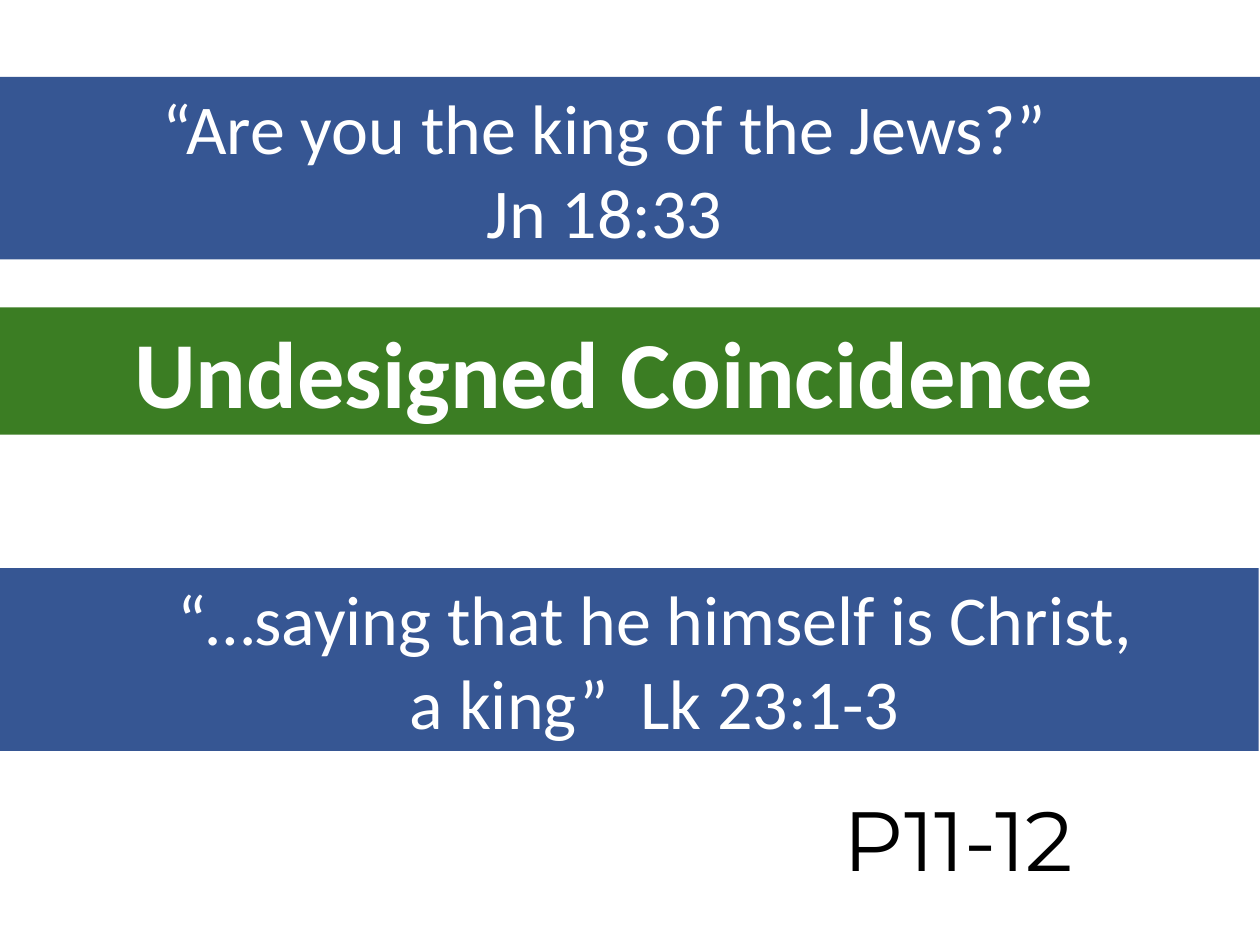
from pptx import Presentation
from pptx.dml.color import RGBColor
from pptx.enum.shapes import MSO_SHAPE
from pptx.enum.text import MSO_ANCHOR, PP_ALIGN
from pptx.util import Inches, Pt

COLORS = {"verse": "365693", "heading": "3B7D23", "light": "FFFFFF", "dark": "000000"}

deck = Presentation()
deck.slide_width, deck.slide_height = Inches(10), Inches(7.5)
COLUMN = deck.slide_width / 100
ROW = deck.slide_height / 75
slide = deck.slides.add_slide(deck.slide_layouts[6])


def grid(left, top, width, height):
    return [round(n) for n in (left * COLUMN, top * ROW, width * COLUMN, height * ROW)]


def write(holder, lines, size, color="light", font="Calibri", bold=False,
          align=PP_ALIGN.CENTER, anchor=MSO_ANCHOR.TOP, left=1, right=1):
    frame = holder.text_frame
    frame.word_wrap = True
    frame.vertical_anchor = anchor
    frame.margin_left, frame.margin_right = round(left * COLUMN), round(right * COLUMN)
    frame.margin_top = frame.margin_bottom = round(0.5 * ROW)
    for number, line in enumerate(lines):
        paragraph = frame.add_paragraph() if number else frame.paragraphs[0]
        paragraph.alignment = align
        run = paragraph.add_run()
        run.text = line
        run.font.name, run.font.size, run.font.bold = font, Pt(size), bold
        run.font.color.rgb = RGBColor.from_string(COLORS[color])


# Bands: place on the grid, fill, lines, text format
bands = [
    ((0, 6.1, 100, 14.5), "verse",
     ["“Are you the king of the Jews?”", "Jn 18:33"], dict(size=40, right=5)),
    ((-1.5, 24.4, 101.5, 10.1), "heading",
     ["Undesigned Coincidence"], dict(size=54, bold=True, left=0)),
    ((0, 45.1, 99.9, 14.5), "verse",
     ["“…saying that he himself is Christ,", "a king”  Lk 23:1-3"], dict(size=40, left=5)),
]
for place, fill, lines, text_format in bands:
    band = slide.shapes.add_shape(MSO_SHAPE.RECTANGLE, *grid(*place))
    band.shadow.inherit = False
    band.fill.solid()
    band.fill.fore_color.rgb = RGBColor.from_string(COLORS[fill])
    band.line.fill.background()
    write(band, lines, anchor=MSO_ANCHOR.MIDDLE, **text_format)

# Page reference
page_reference = slide.shapes.add_textbox(*grid(66, 62, 27.7, 9.1))
write(page_reference, ["P11-12"], size=48, color="dark", font="Montserrat", align=PP_ALIGN.LEFT)

deck.save("out.pptx")
